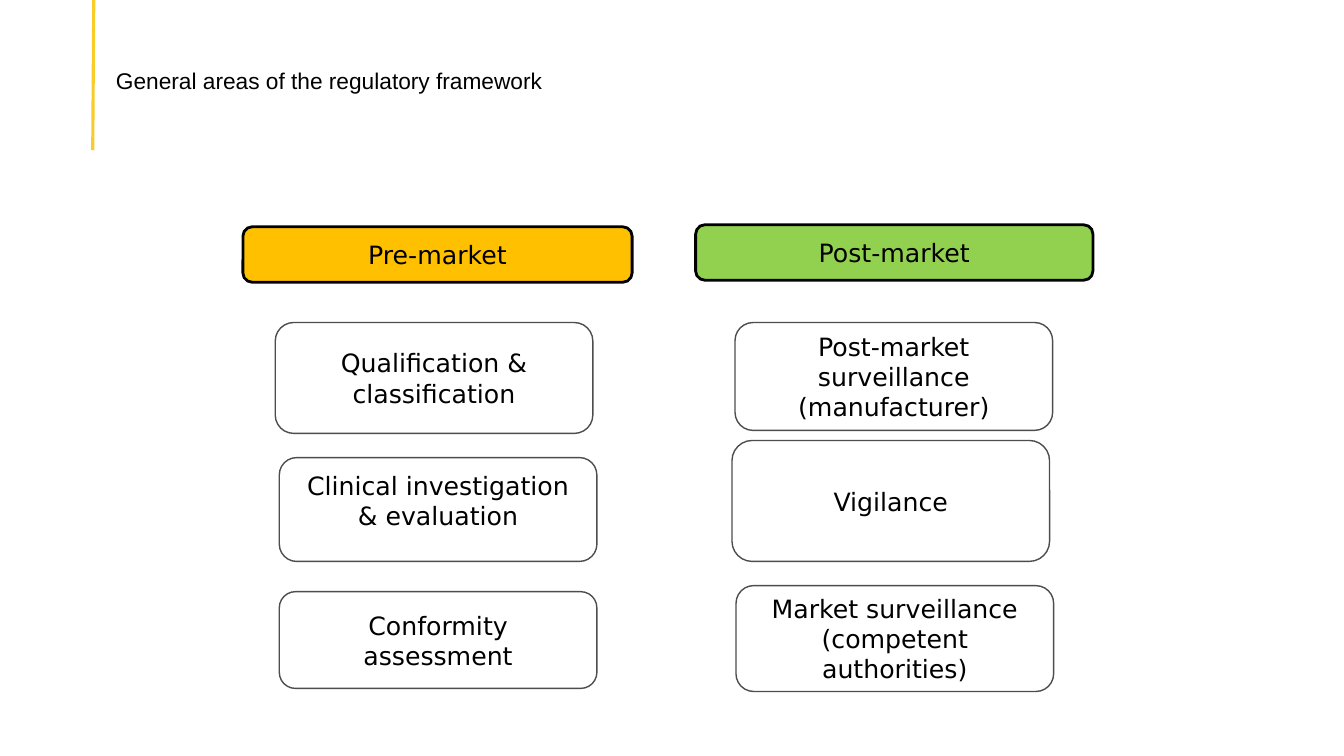
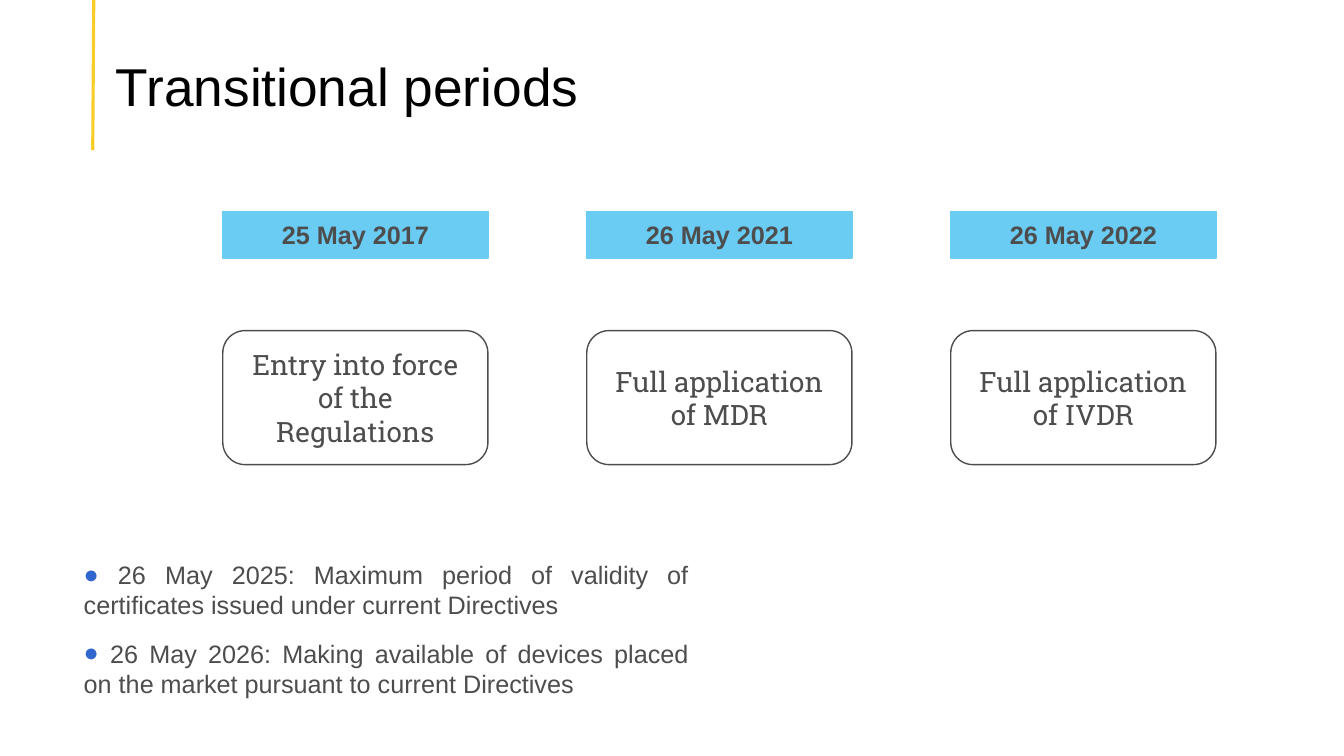
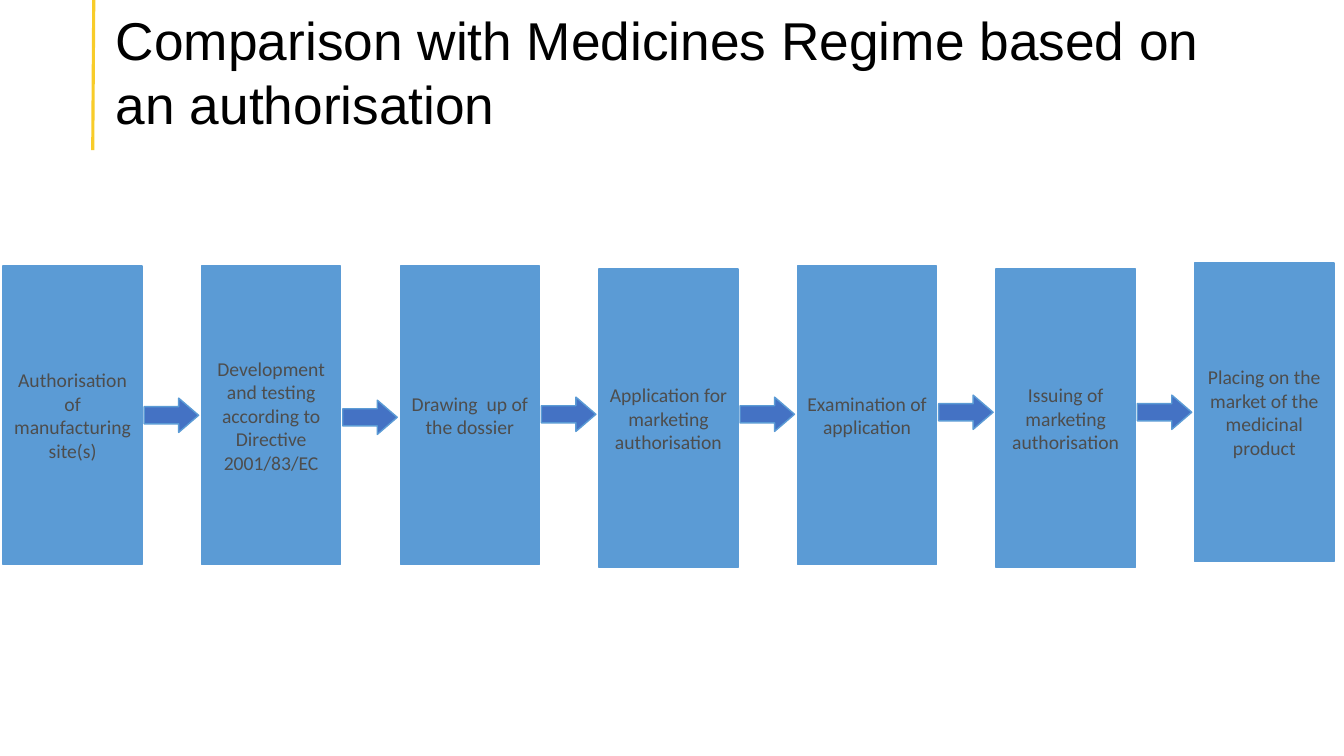
import dataclasses

import lxml.etree
import pptx
import pptx.dml.color
import pptx.enum.shapes
import pptx.enum.text
import pptx.oxml.ns
import pptx.shapes.autoshape
import pptx.slide
import pptx.text.text
import pptx.util

Inches = pptx.util.Inches
Pt = pptx.util.Pt
Preset = pptx.enum.shapes.MSO_SHAPE
Align = pptx.enum.text.PP_ALIGN
Anchor = pptx.enum.text.MSO_ANCHOR
qn = pptx.oxml.ns.qn

COLORS = {
    "white": "FFFFFF",
    "black": "000000",
    "grey": "4D4D4D",
    "rule": "F8CC29",
    "amber": "FFC000",
    "green": "92D050",
    "sky": "6ACBF3",
    "bullet": "3166CF",
    "step": "5B9BD5",
    "arrow": "4472C4",
}
INSET = 0.09


@dataclasses.dataclass(frozen=True)
class TextStyle:
    font: str
    size: float
    color: str
    bold: bool = False
    baseline: int = 0  # superscript offset in percent


@dataclasses.dataclass(frozen=True)
class BoxStyle:
    preset: Preset
    fill: str
    line: str
    line_width: float
    text: TextStyle


@dataclasses.dataclass(frozen=True)
class Box:
    left: float
    top: float
    width: float
    height: float
    paragraphs: tuple[str, ...]
    bottom_inset: float = INSET


@dataclasses.dataclass(frozen=True)
class Milestone:
    date: str
    event: str


@dataclasses.dataclass(frozen=True)
class Step:
    top: float
    text: str
    arrow_top: float | None = None


TITLE = TextStyle("Arial", 38, "black")
RAISED_TITLE = TextStyle("Arial", 28, "black", baseline=30)
BODY = TextStyle("Arial", 18, "grey")
AREA_TEXT = TextStyle("DejaVu Sans", 18, "black")

PRE_MARKET = BoxStyle(Preset.ROUNDED_RECTANGLE, "amber", "black", 2, AREA_TEXT)
POST_MARKET = BoxStyle(Preset.ROUNDED_RECTANGLE, "green", "black", 2, AREA_TEXT)
AREA = BoxStyle(Preset.ROUNDED_RECTANGLE, "white", "grey", 1, AREA_TEXT)
EVENT = BoxStyle(Preset.ROUNDED_RECTANGLE, "white", "grey", 1,
                 TextStyle("Roboto Slab", 20, "grey"))
DATE = BoxStyle(Preset.RECTANGLE, "sky", "sky", 1,
                TextStyle("Arial", 18, "grey", bold=True))
STEP = BoxStyle(Preset.RECTANGLE, "step", "step", 1,
                TextStyle("Calibri", 14, "grey"))
ARROW = BoxStyle(Preset.RIGHT_ARROW, "arrow", "step", 1, STEP.text)

AREA_WIDTH = 3.15
AREAS = (
    Box(2.73, 3.2, AREA_WIDTH, 1.1, ("Qualification &", "classification")),
    Box(2.77, 4.54, AREA_WIDTH, 1.03, ("Clinical investigation & evaluation",), 0.27),
    Box(2.77, 5.87, AREA_WIDTH, 0.96, ("Conformity assessment",)),
    Box(7.29, 3.2, AREA_WIDTH, 1.07, ("Post-market surveillance (manufacturer)",)),
    Box(7.26, 4.37, AREA_WIDTH, 1.2, ("Vigilance",)),
    Box(7.3, 5.81, AREA_WIDTH, 1.05, ("Market surveillance", "(competent authorities)")),
)
MILESTONES = (
    Milestone("25 May 2017", "Entry into force of the Regulations"),
    Milestone("26 May 2021", "Full application of MDR"),
    Milestone("26 May 2022", "Full application of IVDR"),
)
DEADLINES = (
    " 26 May 2025: Maximum period of validity of certificates issued under current Directives",
    " 26 May 2026: Making available of devices placed on the market pursuant to current Directives",
)
STEPS = (
    Step(2.64, "Authorisation of manufacturing site(s)", 3.95),
    Step(2.64, "Development and testing according to Directive 2001/83/EC", 3.97),
    Step(2.64, "Drawing  up of the dossier", 3.94),
    Step(2.67, "Application for marketing authorisation", 3.94),
    Step(2.64, "Examination of application", 3.92),
    Step(2.67, "Issuing of marketing authorisation", 3.92),
    Step(2.61, "Placing on the market of the medicinal product"),
)


def rgb(name: str) -> pptx.dml.color.RGBColor:
    return pptx.dml.color.RGBColor.from_string(COLORS[name])


def add_run(paragraph: pptx.text.text._Paragraph, text: str, style: TextStyle) -> None:
    run = paragraph.add_run()
    run.text = text
    run.font.name = style.font
    run.font.size = Pt(style.size)
    run.font.bold = style.bold
    run.font.color.rgb = rgb(style.color)
    if style.baseline:
        run.font._element.set("baseline", str(style.baseline * 1000))


def fill_frame(frame: pptx.text.text.TextFrame, paragraphs: tuple[str, ...],
               style: TextStyle, align: Align, anchor: Anchor,
               bottom_inset: float = INSET) -> None:
    frame.word_wrap = True
    frame.vertical_anchor = anchor
    frame.margin_left = frame.margin_right = frame.margin_top = Inches(INSET)
    frame.margin_bottom = Inches(bottom_inset)
    for index, text in enumerate(paragraphs):
        paragraph = frame.add_paragraph() if index else frame.paragraphs[0]
        paragraph.alignment = align
        add_run(paragraph, text, style)


def add_box(slide: pptx.slide.Slide, box: Box,
            style: BoxStyle) -> pptx.shapes.autoshape.Shape:
    shape = slide.shapes.add_shape(style.preset, Inches(box.left), Inches(box.top),
                                   Inches(box.width), Inches(box.height))
    shape.shadow.inherit = False
    shape.fill.solid()
    shape.fill.fore_color.rgb = rgb(style.fill)
    shape.line.color.rgb = rgb(style.line)
    shape.line.width = Pt(style.line_width)
    if box.paragraphs:
        fill_frame(shape.text_frame, box.paragraphs, style.text, Align.CENTER,
                   Anchor.MIDDLE, box.bottom_inset)
    return shape


def add_titled_slide(deck: pptx.presentation.Presentation, title: str,
                     style: TextStyle = TITLE, top: float = 0.21,
                     width: float = 12.06, height: float = 1.28) -> pptx.slide.Slide:
    slide = deck.slides.add_slide(deck.slide_layouts[6])
    rule = slide.shapes.add_connector(pptx.enum.shapes.MSO_CONNECTOR.STRAIGHT,
                                      Inches(0.93), Inches(0), Inches(0.92), Inches(1.49))
    rule.line.color.rgb = rgb("rule")
    rule.line.width = Pt(2.25)
    lxml.etree.SubElement(rule._element.spPr, qn("a:effectLst"))
    heading = slide.shapes.add_textbox(Inches(1.06), Inches(top), Inches(width), Inches(height))
    fill_frame(heading.text_frame, (title,), style, Align.LEFT, Anchor.MIDDLE)
    return slide


def add_bullet(paragraph: pptx.text.text._Paragraph) -> None:
    properties = paragraph._p.get_or_add_pPr()
    properties.set("marL", "0")
    properties.set("indent", str(-Inches(0.31)))
    color = lxml.etree.SubElement(properties, qn("a:buClr"))
    lxml.etree.SubElement(color, qn("a:srgbClr"), val=COLORS["bullet"])
    lxml.etree.SubElement(properties, qn("a:buFont"), typeface="Arial")
    lxml.etree.SubElement(properties, qn("a:buChar"), char="●")


def build_framework(deck: pptx.presentation.Presentation) -> None:
    slide = add_titled_slide(deck, "General areas of the regulatory framework", RAISED_TITLE)
    add_box(slide, Box(2.41, 2.25, 3.86, 0.55, ("Pre-market",)), PRE_MARKET)
    add_box(slide, Box(6.9, 2.23, 3.94, 0.55, ("Post-market",)), POST_MARKET)
    for area in AREAS:
        add_box(slide, area, AREA)


def build_transition(deck: pptx.presentation.Presentation) -> None:
    slide = add_titled_slide(deck, "Transitional periods")
    first_left, pitch, width = 2.21, 3.61, 2.63
    for index, milestone in enumerate(MILESTONES):
        left = first_left + index * pitch
        add_box(slide, Box(left, 2.1, width, 0.46, (milestone.date,)), DATE)
        add_box(slide, Box(left, 3.28, width, 1.33, (milestone.event,)), EVENT)

    deadlines = slide.shapes.add_textbox(Inches(0.74), Inches(5.46), Inches(6.18), Inches(1.62))
    fill_frame(deadlines.text_frame, DEADLINES, BODY, Align.JUSTIFY, Anchor.TOP)
    for index, paragraph in enumerate(deadlines.text_frame.paragraphs):
        add_bullet(paragraph)
        if index:
            paragraph.space_before = Pt(13)


def build_comparison(deck: pptx.presentation.Presentation) -> None:
    slide = add_titled_slide(deck, "Comparison with Medicines Regime based on an authorisation",
                             top=0, width=11.22, height=1.41)
    first_left, pitch, width, gap = 0.03, 1.97, 1.38, 0.02
    for index, step in enumerate(STEPS):
        left = first_left + index * pitch
        add_box(slide, Box(left, step.top, width, 2.96, (step.text,)), STEP)
        if step.arrow_top is not None:
            arrow = add_box(slide, Box(left + width + gap, step.arrow_top, 0.54, 0.34, ()), ARROW)
            arrow.adjustments[1] = 0.58


def main() -> None:
    deck = pptx.Presentation()
    deck.slide_width = Inches(13.33)
    deck.slide_height = Inches(7.5)
    build_framework(deck)
    build_transition(deck)
    build_comparison(deck)
    deck.save("out.pptx")


if __name__ == "__main__":
    main()
